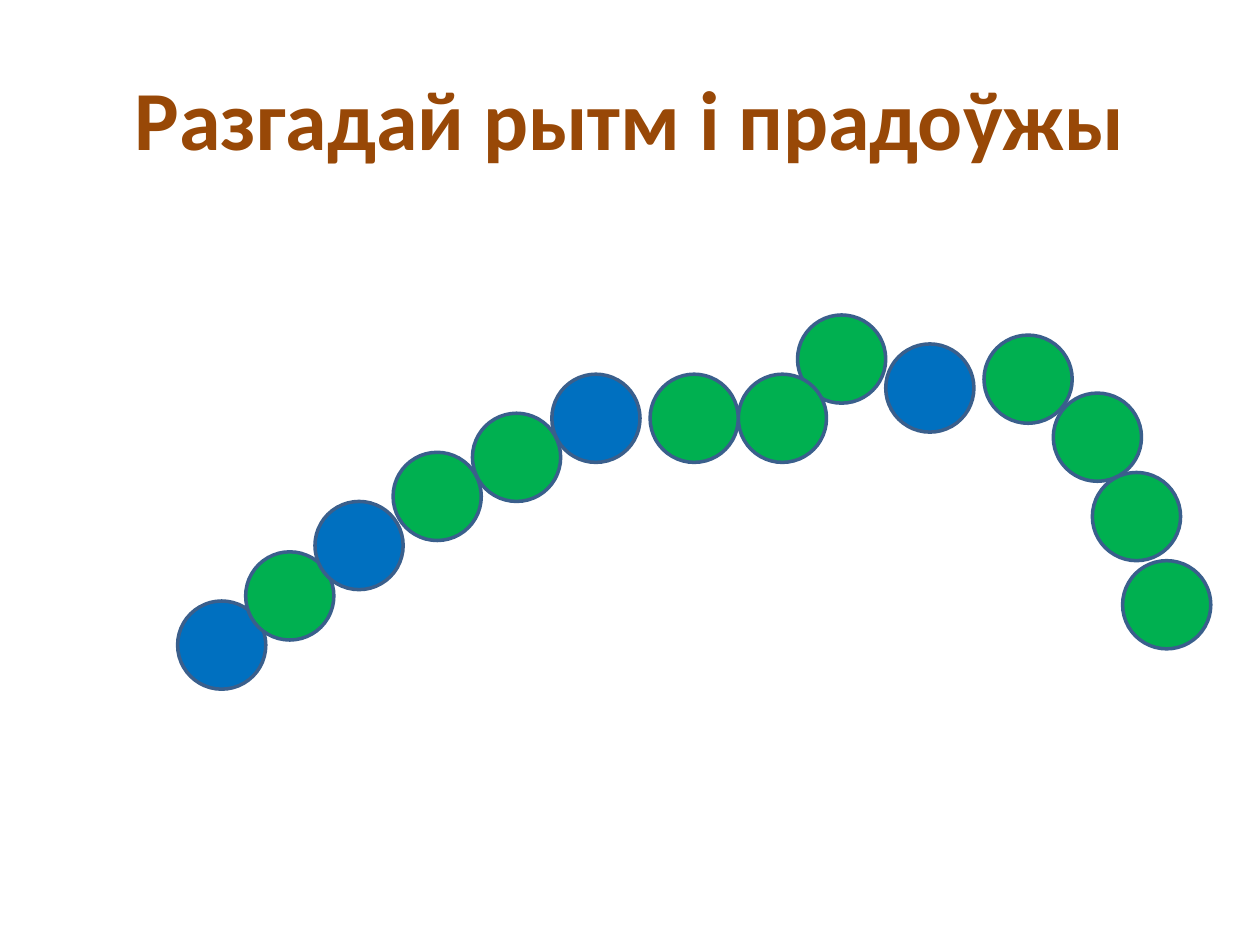
from typing import NamedTuple

from pptx import Presentation
from pptx.dml.color import RGBColor
from pptx.enum.shapes import MSO_SHAPE as Shape
from pptx.enum.text import MSO_ANCHOR as Anchor, PP_ALIGN as Align
from pptx.util import Inches, Pt

GREEN = "00B050"
BLUE = "0070C0"
OUTLINE = "3A5F8C"
BROWN = "984807"
DIAMETER = 0.7


class Bead(NamedTuple):
    left: float
    top: float
    color: str


# Listed from back to front, so that overlapping beads stack correctly
BEADS = [
    Bead(7.81, 2.66, GREEN),
    Bead(7.03, 2.73, BLUE),
    Bead(1.41, 4.77, BLUE),
    Bead(6.33, 2.5, GREEN),
    Bead(5.86, 2.97, GREEN),
    Bead(5.16, 2.97, GREEN),
    Bead(1.95, 4.38, GREEN),
    Bead(2.5, 3.98, BLUE),
    Bead(3.12, 3.59, GREEN),
    Bead(4.38, 2.97, BLUE),
    Bead(3.75, 3.28, GREEN),
    Bead(8.36, 3.12, GREEN),
    Bead(8.67, 3.75, GREEN),
    Bead(8.91, 4.45, GREEN),
]


def paint(color_format, color: str) -> None:
    color_format.rgb = RGBColor.from_string(color)


def add_title(slide, text: str) -> None:
    box = slide.shapes.add_textbox(Inches(0.5), Inches(0.3), Inches(9), Inches(1.25))
    frame = box.text_frame
    frame.word_wrap = True
    frame.vertical_anchor = Anchor.MIDDLE
    para = frame.paragraphs[0]
    para.text = text
    para.alignment = Align.CENTER
    para.font.name = "Calibri"
    para.font.size = Pt(48)
    para.font.bold = True
    paint(para.font.color, BROWN)


def add_bead(slide, bead: Bead) -> None:
    circle = slide.shapes.add_shape(
        Shape.OVAL, Inches(bead.left), Inches(bead.top), Inches(DIAMETER), Inches(DIAMETER)
    )
    circle.shadow.inherit = False
    circle.fill.solid()
    paint(circle.fill.fore_color, bead.color)
    paint(circle.line.color, OUTLINE)
    circle.line.width = Pt(2)


def main() -> None:
    deck = Presentation()
    deck.slide_width, deck.slide_height = Inches(10), Inches(7.5)
    slide = deck.slides.add_slide(deck.slide_layouts[6])
    add_title(slide, "Разгадай рытм і прадоўжы")
    for bead in BEADS:
        add_bead(slide, bead)
    deck.save("out.pptx")


if __name__ == "__main__":
    main()
